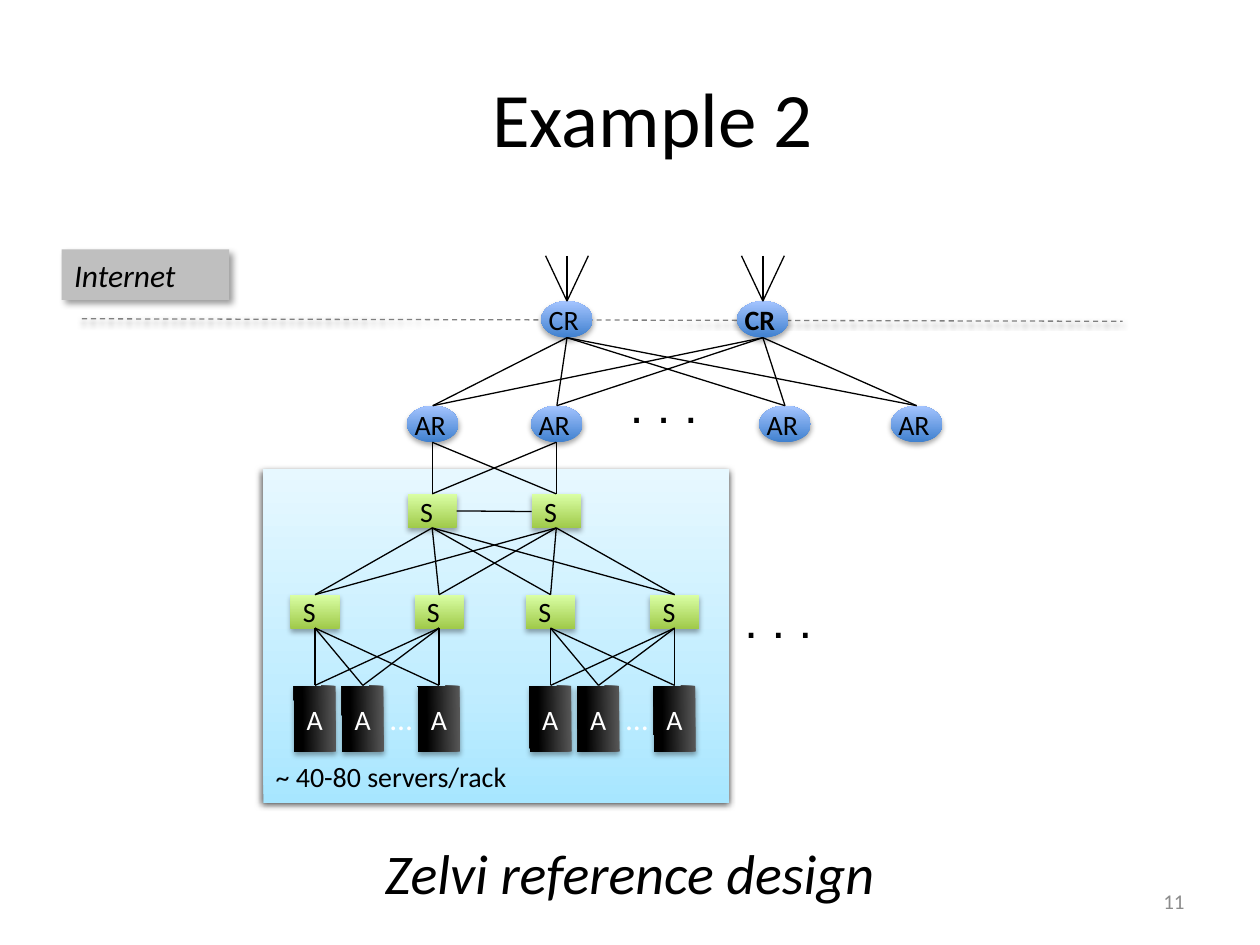
from itertools import product
from pptx import Presentation
from pptx.dml.color import RGBColor
from pptx.enum.dml import MSO_LINE
from pptx.enum.shapes import MSO_CONNECTOR, MSO_SHAPE
from pptx.enum.text import MSO_ANCHOR, PP_ALIGN
from pptx.oxml import parse_xml
from pptx.oxml.ns import nsdecls
from pptx.util import Inches, Pt

BLACK = RGBColor(0, 0, 0)
WHITE = RGBColor(255, 255, 255)
GREY = RGBColor(0x80, 0x80, 0x80)
PALE = RGBColor(0x8C, 0x8C, 0x8C)
SILVER = RGBColor(0xBF, 0xBF, 0xBF)
BLUE = [(0, RGBColor(0x3F, 0x80, 0xCE)), (100, RGBColor(0xA4, 0xC4, 0xFF))]
GREEN = [(0, RGBColor(0xA0, 0xCA, 0x4A)), (100, RGBColor(0xDA, 0xFF, 0xA5))]
DARK = [(0, RGBColor(0x59, 0x59, 0x59)), (80, BLACK), (100, BLACK)]
SKY = [(0, RGBColor(0xA7, 0xE6, 0xFF)), (35, RGBColor(0xC1, 0xED, 0xFF)),
       (100, RGBColor(0xE7, 0xF8, 0xFF))]
SOFT = (35, 3.1, 1.8, 90)


def grid(*vals):
    """Turn cells of a 100 by 75 grid into lengths."""
    return [Inches(val / 10) for val in vals]


def shade(shape, alpha, blur, dist, turn):
    """Give a shape an outer shadow."""
    shape._element.spPr.append(parse_xml(
        f'<a:effectLst {nsdecls("a")}><a:outerShdw blurRad="{Pt(blur)}" '
        f'dist="{Pt(dist)}" dir="{turn * 60000}" algn="ctr" rotWithShape="0">'
        f'<a:srgbClr val="{BLACK}"><a:alpha val="{alpha * 1000}"/></a:srgbClr>'
        '</a:outerShdw></a:effectLst>'))


def blend(shape, stops):
    """Fill a shape with a gradient that runs upward."""
    shape.fill.background()
    props = shape._element.spPr
    marks = "".join(f'<a:gs pos="{pos * 1000}"><a:srgbClr val="{tint}"/></a:gs>'
                    for pos, tint in stops)
    props.replace(props.find("{*}noFill"), parse_xml(
        f'<a:gradFill {nsdecls("a")} rotWithShape="1"><a:gsLst>{marks}</a:gsLst>'
        '<a:lin ang="16200000" scaled="0"/></a:gradFill>'))


def write(shape, text, size, tint=BLACK, face="Calibri", align=PP_ALIGN.LEFT,
          anchor=MSO_ANCHOR.TOP, wrap=True, bold=False, slant=False):
    """Set and format the text of a shape."""
    frame = shape.text_frame
    frame.text = text
    frame.word_wrap = wrap
    frame.vertical_anchor = anchor
    para = frame.paragraphs[0]
    para.alignment = align
    font = para.runs[0].font
    font.name, font.size, font.bold, font.italic = face, Pt(size), bold, slant
    font.color.rgb = tint


def label(slide, box, text, size, **style):
    """Add a text box."""
    write(slide.shapes.add_textbox(*grid(*box)), text, size, **style)


def block(slide, kind, box, stops, cast=SOFT):
    """Add a gradient shape with a shadow and no outline."""
    shape = slide.shapes.add_shape(kind, *grid(*box))
    blend(shape, stops)
    shape.line.fill.background()
    shade(shape, *cast)
    return shape


def link(slide, start, end):
    """Join two points with a thin line."""
    line = slide.shapes.add_connector(MSO_CONNECTOR.STRAIGHT, *grid(*start, *end))
    line.line.color.rgb = BLACK
    line.line.width = Pt(0.75)
    line._element.spPr.append(parse_xml(f'<a:effectLst {nsdecls("a")}/>'))
    return line


def mesh(slide, upper, high, lower, low):
    """Join every upper column to every lower column."""
    for top, foot in product(upper, lower):
        link(slide, (top, high), (foot, low))


def router(slide, mid, top, text, bold=False):
    """Add a round router centred on a column."""
    shape = block(slide, MSO_SHAPE.OVAL, (mid - 2.05, top, 4.1, 2.9), BLUE)
    write(shape, text, 16, anchor=MSO_ANCHOR.MIDDLE, wrap=False, bold=bold)
    frame = shape.text_frame
    frame.margin_left = frame.margin_right = 0
    frame.margin_top = frame.margin_bottom = 0


def switch(slide, mid, top):
    """Add a square switch centred on a column."""
    shape = block(slide, MSO_SHAPE.RECTANGLE, (mid - 1.95, top, 3.9, 2.7), GREEN)
    write(shape, "S", 16, anchor=MSO_ANCHOR.MIDDLE, wrap=False)


def server(slide, mid, top):
    """Add an upright server centred on a column."""
    shape = block(slide, MSO_SHAPE.FLOWCHART_PREDEFINED_PROCESS,
                  (mid - 2.6, top + 1, 5.2, 3.3), DARK)
    shape.rotation = 269.5
    write(shape, "A", 16, WHITE, anchor=MSO_ANCHOR.MIDDLE, wrap=False)
    shape.text_frame._txBody.bodyPr.set("vert", "eaVert")


def border(slide, box):
    """Draw the internet label and the dashed border."""
    left, top, wide, high = box
    line = link(slide, (left + 1.6, top + high - 0.2), (left + wide, top + high))
    line.line.color.rgb = GREY
    line.line.dash_style = MSO_LINE.DASH
    props = line._element.spPr
    props.remove(props.find("{*}effectLst"))
    shade(line, 38, 3.1, 1.6, 90)
    tag = slide.shapes.add_shape(MSO_SHAPE.RECTANGLE, *grid(left, top, 13.3, 4))
    tag.fill.solid()
    tag.fill.fore_color.rgb = SILVER
    tag.line.fill.background()
    shade(tag, 40, 4, 3, 45)
    write(tag, "Internet", 18, slant=True)


def core(slide, box):
    """Draw the core and access routers."""
    left, top, wide, high = box
    cores = [left + 12.7, left + 28.25]
    heads = [left + 2.05, left + 11.9, left + 30, left + wide - 2.05]
    for mid, bold in zip(cores, (False, True)):
        router(slide, mid, top + 3.6, "CR", bold)
        mesh(slide, [mid - 1.7, mid, mid + 1.7], top, [mid], top + 3.6)
    for mid in heads:
        router(slide, mid, top + high - 2.9, "AR")
    mesh(slide, cores, top + 6.5, heads, top + high - 2.9)
    label(slide, (left + 16.7, top + 8.9, 7.5, 5.7), ". . .", 28,
          face="Arial", wrap=False)


def rack(slide, box):
    """Draw two switches over a row of servers."""
    left, top, wide, high = box
    pair = [left, left + wide]
    hosts = [left, left + 3.8, left + wide]
    for mid in pair:
        switch(slide, mid, top)
    for mid in hosts:
        server(slide, mid, top + high - 5.2)
    label(slide, (left + 5, top + 7.8, 3.8, 4), "…", 18, tint=WHITE, wrap=False)
    mesh(slide, pair, top + 2.65, hosts, top + high - 5.2)


def pod(slide, box):
    """Draw the shaded pod with its switches and racks."""
    left, top, wide, high = box
    block(slide, MSO_SHAPE.RECTANGLE, box, SKY, cast=(69, 4, 1.6, 120))
    pair = [left + 13.4, left + 23.25]
    racks = [left + 4.1, left + 22.8]
    for mid in pair:
        switch(slide, mid, top + 2)
    mesh(slide, pair, top - 2.1, pair, top + 2)
    link(slide, (pair[0] + 1.95, top + 3.35), (pair[1] - 1.95, top + 3.4))
    for mid in racks:
        rack(slide, (mid, top + 10, 9.85, 12.4))
        mesh(slide, pair, top + 4.7, [mid, mid + 9.85], top + 10)
    label(slide, (left + wide + 0.2, top + 9.1, 7.5, 5.7), ". . .", 28,
          face="Arial", wrap=False)
    label(slide, (left, top + high - 3.9, wide, 3.7), "~ 40-80 servers/rack", 16)


def heading(slide, box):
    """Place and format the title."""
    title = slide.shapes.title
    title.left, title.top, title.width, title.height = grid(*box)
    write(title, "Example 2", 44, align=PP_ALIGN.CENTER, anchor=MSO_ANCHOR.MIDDLE)


def footer(slide, box):
    """Write the caption and the page number."""
    left, top, wide, high = box
    label(slide, box, "Zelvi reference design", 32, align=PP_ALIGN.CENTER, slant=True)
    label(slide, (left + wide - 23.3, top + 3.6, 23.3, 3.6), "11", 12, tint=PALE,
          align=PP_ALIGN.RIGHT, anchor=MSO_ANCHOR.MIDDLE)


def main():
    """Build and save the slide."""
    deck = Presentation()
    deck.slide_width, deck.slide_height = grid(100, 75)
    slide = deck.slides.add_slide(deck.slide_layouts[5])
    heading(slide, (5, 3, 93.6, 12.5))
    border(slide, (4.9, 19.8, 84.2, 5.7))
    core(slide, (32.3, 20.3, 42.5, 14.8))
    pod(slide, (20.9, 37.2, 37, 26.5))
    footer(slide, (5, 66.1, 90, 9.3))
    deck.save("out.pptx")


if __name__ == "__main__":
    main()
